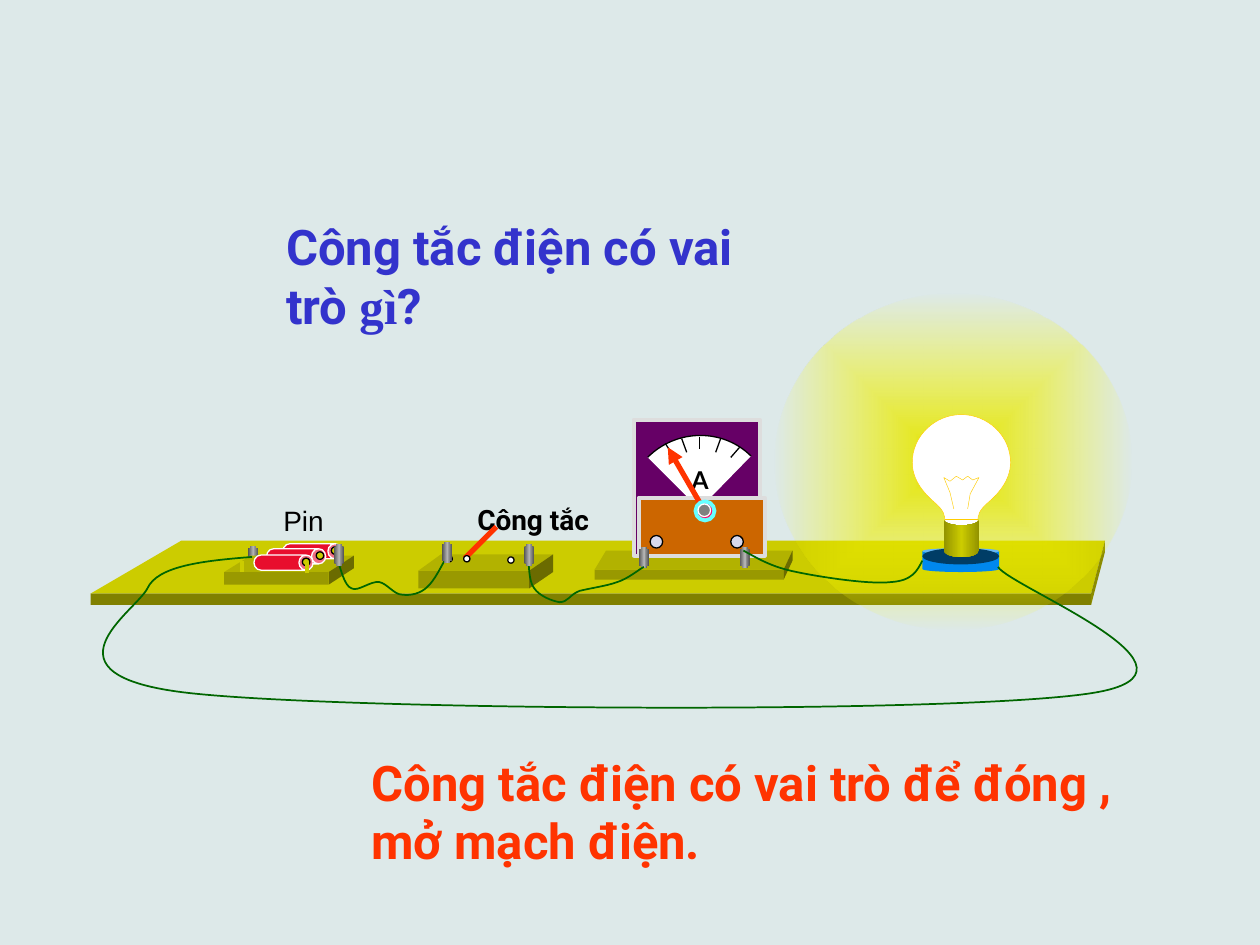
from lxml.etree import SubElement as Sub
from pptx import Presentation as Deck
from pptx.dml.color import RGBColor
from pptx.enum.shapes import MSO_CONNECTOR as Link, MSO_SHAPE as Kind
from pptx.enum.text import MSO_ANCHOR as Anchor, MSO_AUTO_SIZE as Fit, PP_ALIGN as Align
from pptx.oxml.ns import qn
from pptx.util import Inches, Pt

COLS, ROWS = 10, 7.5
CELL = Inches(1)
STEEL = [(0, "525252", 100), (50, "B2B2B2", 100), (100, "525252", 100)]
BRASS = [(0, "929200", 100), (50, "CCCC00", 100), (100, "929200", 100)]
GLOW = [(0, "E3E300", 100), (100, "FFFF00", 0)]
BOARD = ("CCCC00", "808000", "8C8C00")
PLATE = ("B2B200", "999900", "6B6B00")
WIRE = ("006600", 1)
EDGE = ("000000", 0.75)
FRAME = ("DDDDDD", 2.25)


def grid(*cells):
    return [round(n * CELL) for n in cells]


def tint(code):
    return RGBColor.from_string(code)


def paint(shape, fill=None, line=None):
    shape.shadow.inherit = False
    if fill:
        shape.fill.solid()
        shape.fill.fore_color.rgb = tint(fill)
    else:
        shape.fill.background()
    if line:
        shape.line.color.rgb = tint(line[0])
        shape.line.width = Pt(line[1])
    else:
        shape.line.fill.background()
    return shape


def form(slide, kind, at, fill=None, line=None, turn=0, adj=None):
    shape = slide.shapes.add_shape(kind, *grid(*at))
    shape.rotation = turn
    if adj is not None:
        shape.adjustments[0] = adj
    return paint(shape, fill, line)


def blend(shape, stops, angle=None):
    void = shape.element.spPr.find(qn("a:noFill"))
    fill = void.makeelement(qn("a:gradFill"), {"rotWithShape": "1"})
    void.getparent().replace(void, fill)
    items = Sub(fill, qn("a:gsLst"))
    for spot, code, alpha in stops:
        stop = Sub(items, qn("a:gs"), pos=str(spot * 1000))
        color = Sub(stop, qn("a:srgbClr"), val=code)
        if alpha < 100:
            Sub(color, qn("a:alpha"), val=str(alpha * 1000))
    if angle is None:
        core = Sub(fill, qn("a:path"), path="shape")
        Sub(core, qn("a:fillToRect"), l="50000", t="50000", r="50000", b="50000")
    else:
        Sub(fill, qn("a:lin"), ang=str(angle * 60000), scaled="0")


def trace(slide, dots, fill=None, line=None, close=False, curve=False):
    spots = [grid(*dot) for dot in dots]
    pen = slide.shapes.build_freeform(*spots[0])
    pen.add_line_segments(spots[1:], close=close)
    shape = pen.convert_to_shape()
    if curve:
        bend(shape)
    return paint(shape, fill, line)


def bend(shape):
    legs = list(shape.element.iter(qn("a:lnTo")))
    for i in range(0, len(legs) // 3 * 3, 3):
        trio = legs[i:i + 3]
        arc = trio[0].makeelement(qn("a:cubicBezTo"))
        trio[0].addprevious(arc)
        for leg in trio:
            arc.append(leg[0])
            leg.getparent().remove(leg)


def rule(slide, x1, y1, x2, y2, line=EDGE, arrow=False):
    link = slide.shapes.add_connector(Link.STRAIGHT, *grid(x1, y1, x2, y2))
    link.line.color.rgb = tint(line[0])
    link.line.width = Pt(line[1])
    if arrow:
        Sub(link.line._get_or_add_ln(), qn("a:tailEnd"), type="triangle")
    Sub(link.element.spPr, qn("a:effectLst"))


def write(shape, at, runs, size, color, bold=True, wrap=True):
    shape.left, shape.top, shape.width, shape.height = grid(*at)
    frame = shape.text_frame
    frame.auto_size = Fit.NONE
    frame.word_wrap = wrap
    frame.vertical_anchor = Anchor.TOP
    para = frame.paragraphs[0]
    para.alignment = Align.LEFT
    for text, face in runs:
        run = para.add_run()
        run.text = text
        run.font.name = face
        run.font.size = Pt(size)
        run.font.bold = bold
        run.font.color.rgb = tint(color)


def note(slide, at, *style, **more):
    write(slide.shapes.add_textbox(*grid(*at)), at, *style, **more)


def slab(slide, at, back, tones):
    x, y, w, h = at
    left, right, rear = back
    top, front, side = tones
    end = x + w
    form(slide, Kind.RECTANGLE, at, front)
    trace(slide, [(x, y), (left, rear), (right, rear), (end, y)], top, close=True)
    trace(slide, [(end, y), (right, rear), (right, rear + h), (end, y + h)], side, close=True)


def post(slide, x, y):
    blend(form(slide, Kind.CROSS, (x, y, 0.08, 0.17), adj=0.25), STEEL, 0)


def knob(slide, x, y, size, fill="FFFFFF", line=EDGE):
    form(slide, Kind.OVAL, (x, y, size, size), fill, line)


def power(slide):
    post(slide, 1.97, 4.33)
    slab(slide, (1.78, 4.54, 0.83, 0.1), (1.99, 2.81, 4.41), PLATE)
    rule(slide, 1.92, 4.54, 1.92, 4.45, ("CCCC00", 2.25))
    for x, y in [(2.42, 4.14), (2.29, 4.18), (2.19, 4.23)]:
        form(slide, Kind.CAN, (x, y, 0.12, 0.47), "E80E2D", ("FFFFFF", 0.75), 90, 0.94)
    for x, y in [(2.51, 4.38), (2.63, 4.34), (2.4, 4.43)]:
        knob(slide, x, y, 0.06, "CCCC00")
    rule(slide, 2.44, 4.55, 2.44, 4.46, ("CCCC00", 2.25))


def switch(slide):
    note(slide, (3.69, 3.94, 1.16, 0.37), [("Công tắc", "Roboto")], 16, "000000", wrap=False)
    slab(slide, (3.32, 4.53, 0.88, 0.14), (3.5, 4.39, 4.4), PLATE)
    trace(slide, [(2.68, 4.45), (2.7, 4.49), (2.73, 4.65), (2.79, 4.67), (2.84, 4.7),
                  (2.94, 4.61), (3.01, 4.62), (3.07, 4.63), (3.13, 4.72), (3.19, 4.72),
                  (3.26, 4.73), (3.34, 4.71), (3.39, 4.66), (3.45, 4.61), (3.51, 4.48),
                  (3.54, 4.43)], line=WIRE, curve=True)
    knob(slide, 3.54, 4.41, 0.05)
    knob(slide, 4.03, 4.42, 0.05)
    rule(slide, 3.69, 4.43, 3.94, 4.18, ("FF3300", 3))
    post(slide, 3.51, 4.3)
    post(slide, 2.65, 4.32)
    knob(slide, 3.68, 4.41, 0.05)


def meter(slide):
    form(slide, Kind.RECTANGLE, (5.03, 3.33, 1, 1.08), "660066", FRAME)
    arc = [(5.14, 3.63), (5.37, 3.4), (5.74, 3.4), (5.96, 3.62)]
    trace(slide, arc + [(5.55, 4.04)], "FFFFFF", close=True, curve=True)
    trace(slide, arc, line=EDGE, curve=True)
    form(slide, Kind.RECTANGLE, (5.07, 3.95, 1, 0.46), "CC6600", FRAME)
    for x in (5.16, 5.8):
        knob(slide, x, 4.25, 0.1, "D8D8EC")
    post(slide, 5.07, 4.34)
    note(slide, (5.39, 3.64, 0.34, 0.33), [("A", "Lato")], 14, "000000", wrap=False)
    for tick in [(5.55, 3.47, 5.55, 3.56), (5.28, 3.52, 5.34, 3.61), (5.87, 3.55, 5.8, 3.63),
                 (5.41, 3.48, 5.45, 3.59), (5.72, 3.48, 5.68, 3.59)]:
        rule(slide, *tick)
    rule(slide, 5.56, 4, 5.3, 3.55, ("FF3300", 3), arrow=True)
    knob(slide, 5.52, 3.98, 0.15, "FF0066", ("66FFFF", 2.25))
    knob(slide, 5.54, 4, 0.1, "808080", ("FFFFFF", 0.75))
    trace(slide, [(4.19, 4.41), (4.2, 4.45), (4.19, 4.61), (4.24, 4.67), (4.28, 4.73),
                  (4.38, 4.77), (4.44, 4.78), (4.51, 4.78), (4.52, 4.72), (4.6, 4.69),
                  (4.68, 4.67), (4.82, 4.65), (4.9, 4.62), (4.99, 4.59), (5.07, 4.52),
                  (5.11, 4.5)], line=WIRE, curve=True)
    post(slide, 4.16, 4.32)
    post(slide, 5.87, 4.34)


def lamp(slide):
    blend(form(slide, Kind.OVAL, (6.15, 2.33, 2.83, 2.67)), GLOW)
    gold = ("FFCC00", 0.25)
    half = [(7.63, 3.29), (7.84, 3.29), (8.02, 3.46), (8.02, 3.67), (8.02, 3.82),
            (7.91, 3.93), (7.84, 3.99), (7.77, 4.05), (7.76, 4.09), (7.76, 4.14),
            (7.76, 4.19), (7.76, 4.23), (7.76, 4.28), (7.76, 4.35), (7.7, 4.41), (7.63, 4.41)]
    twin = [(2 * 7.63 - x, y) for x, y in reversed(half[:-1])]
    trace(slide, half + twin, "FFFFFF", gold, close=True, curve=True)
    trace(slide, [(7.57, 4.04), (7.54, 3.91), (7.49, 3.79), (7.54, 3.82), (7.59, 3.78),
                  (7.64, 3.81), (7.68, 3.78), (7.72, 3.81), (7.77, 3.79), (7.7, 3.92),
                  (7.68, 4.04)], line=gold)
    rule(slide, 7.5, 4.12, 7.76, 4.12, gold)
    form(slide, Kind.CAN, (7.32, 4.35, 0.61, 0.19), "0088EE")
    form(slide, Kind.OVAL, (7.32, 4.35, 0.61, 0.13), "003D66")
    base = form(slide, Kind.FLOWCHART_STORED_DATA, (7.48, 4.13, 0.3, 0.28), turn=270)
    blend(base, BRASS, 90)


def main():
    deck = Deck()
    deck.slide_width, deck.slide_height = grid(COLS, ROWS)
    slide = deck.slides.add_slide(deck.slide_layouts[5])
    slide.background.fill.solid()
    slide.background.fill.fore_color.rgb = tint("DDE9E9")
    ask = [("Công tắc điện có vai trò ", "Roboto"), ("gì", "Times New Roman"), ("?", "Roboto")]
    write(slide.shapes.title, (2.17, 1.67, 4.25, 1.04), ask, 28, "3333CC")
    slab(slide, (0.72, 4.71, 7.94, 0.09), (1.44, 8.77, 4.29), BOARD)
    slab(slide, (4.72, 4.52, 1.5, 0.08), (4.81, 6.29, 4.37), PLATE)
    power(slide)
    switch(slide)
    meter(slide)
    lamp(slide)
    trace(slide, [(2, 4.42), (1.62, 4.45), (1.25, 4.49), (1.17, 4.67), (1.08, 4.85),
                  (0.25, 5.36), (1.5, 5.5), (2.75, 5.64), (7.6, 5.67), (8.67, 5.5),
                  (9.74, 5.33), (8.04, 4.67), (7.92, 4.5)], line=WIRE, curve=True)
    trace(slide, [(5.9, 4.37), (6.01, 4.43), (6.12, 4.5), (6.32, 4.54), (6.51, 4.58),
                  (6.9, 4.64), (7.07, 4.62), (7.24, 4.61), (7.28, 4.53), (7.32, 4.45)],
          line=WIRE, curve=True)
    note(slide, (2.15, 3.95, 0.75, 0.37), [("Pin", "Arial")], 16, "000000", bold=False)
    reply = [("Công tắc điện có vai trò để đóng , mở mạch điện.", "Roboto")]
    note(slide, (2.85, 5.92, 6.56, 1.04), reply, 28, "FF3300")
    deck.save("out.pptx")


if __name__ == "__main__":
    main()
